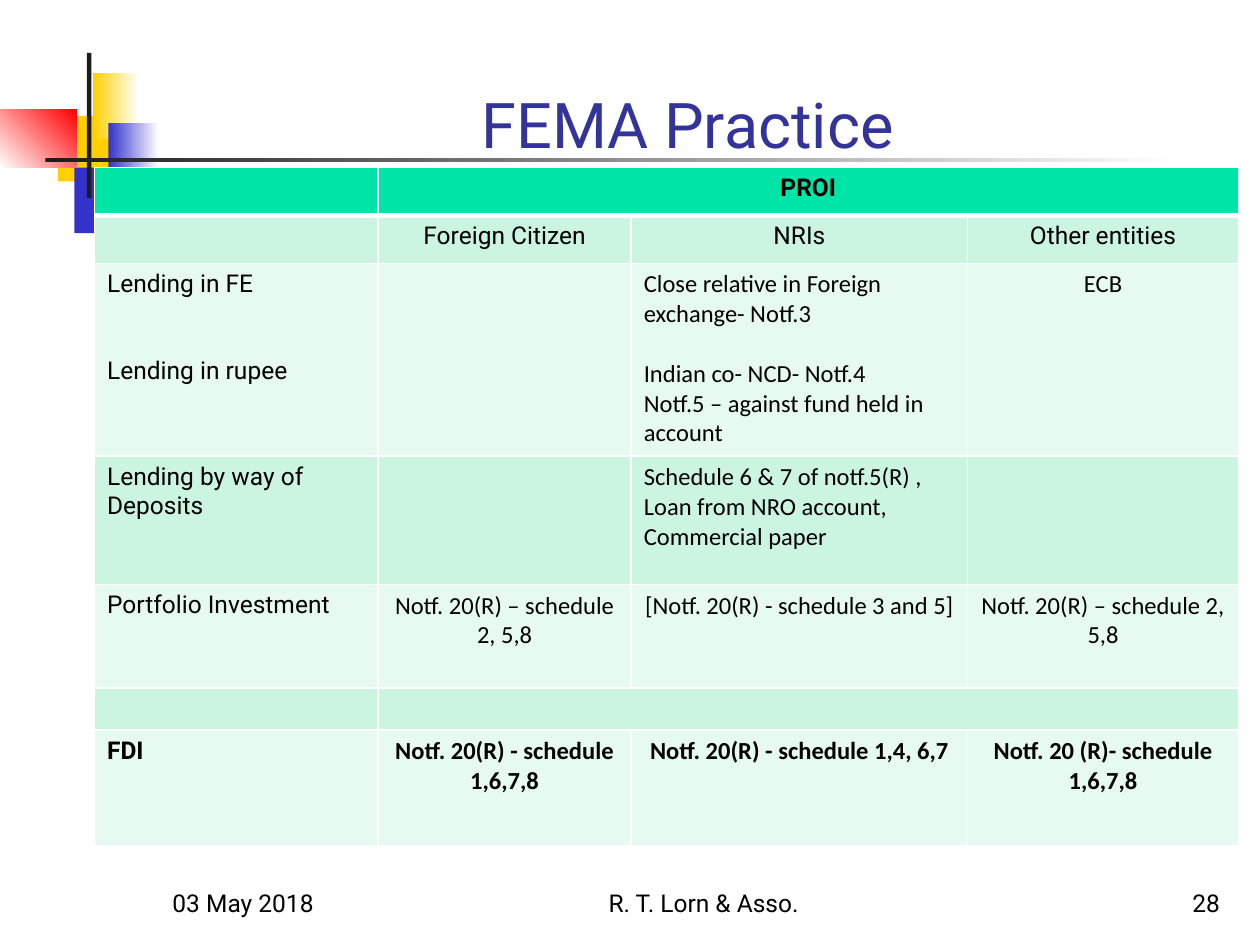
from dataclasses import dataclass

from lxml import etree
from pptx import Presentation
from pptx.dml.color import RGBColor
from pptx.enum.shapes import MSO_SHAPE
from pptx.enum.text import MSO_ANCHOR, PP_ALIGN
from pptx.oxml.ns import qn
from pptx.util import Inches, Pt

RECTANGLE = MSO_SHAPE.RECTANGLE
BOTTOM = MSO_ANCHOR.BOTTOM
LEFT, CENTER, RIGHT = PP_ALIGN.LEFT, PP_ALIGN.CENTER, PP_ALIGN.RIGHT

WHITE, BLACK, DARK = "FFFFFF", "000000", "1C1C1C"
YELLOW, BLUE, RED, TITLE_BLUE = "FFCF01", "3333CC", "FF0000", "333399"
HEADER, BAND, PALE = "00E4A8", "CCF5E1", "E7FAF1"

BLOCKS = [
    ((4.6, 9.2, 4.8, 5.2), (YELLOW,), 0),
    ((5.9, 13.3, 4.6, 5.2), (BLUE,), 0),
    ((7.4, 5.8, 3.6, 5.2), (YELLOW, WHITE), 0),
    ((8.6, 9.8, 4, 5.2), (BLUE, WHITE), 0),
    ((0, 8.7, 6.1, 4.6), (WHITE, RED), 45),
    ((6.9, 4.2, 0.35, 11.5), (DARK,), 0),
    ((3.6, 12.5, 90, 0.35), (DARK, WHITE), 0),
]
COLUMNS = [22.5, 20.1, 26.7, 21.5]
ROW_HEIGHTS = [3.8, 3.8, 15.3, 10.2, 8.2, 3.3, 9.2]
ROWS = [
    ["", "PROI", "", ""],
    ["", "Foreign Citizen", "NRIs", "Other entities"],
    ["Lending in FE\nLending in rupee", "",
     "Close relative in Foreign exchange- Notf.3\nIndian co- NCD- Notf.4\n"
     "Notf.5 – against fund held in account", "ECB"],
    ["Lending by way of Deposits", "",
     "Schedule 6 & 7 of notf.5(R) , Loan from NRO account, Commercial paper", ""],
    ["Portfolio Investment", "Notf. 20(R) – schedule 2, 5,8",
     "[Notf. 20(R) - schedule 3 and 5] ", "Notf. 20(R) – schedule 2, 5,8"],
    ["", "", "", ""],
    ["FDI", "Notf. 20(R) - schedule 1,6,7,8",
     "Notf. 20(R) - schedule 1,4, 6,7", "Notf. 20 (R)- schedule 1,6,7,8"],
]
MERGED_ROWS, BOLD_ROWS, LENDING_ROWS = (0, 5), (0, 6), (2, 3)
GAPS = {"Lending in rupee": 33, "Indian co- NCD- Notf.4": 17}


def color(code):
    """Turn a hex string into a colour."""
    return RGBColor.from_string(code)


@dataclass
class SlideBuilder:
    """Draw elements on a slide with a grid of 100 columns by 75 rows."""

    slide: object
    font: str = "Roboto"
    body_font: str = "Calibri"
    size: int = 14
    unit: int = Inches(0.1)

    def place(self, at):
        """Convert grid units to slide lengths."""
        return [round(value * self.unit) for value in at]

    def block(self, at, colors, angle):
        """Add a rectangle with a plain or gradient fill."""
        box = self.slide.shapes.add_shape(RECTANGLE, *self.place(at))
        box.shadow.inherit = False
        box.line.fill.background()
        if len(colors) == 1:
            box.fill.solid()
            box.fill.fore_color.rgb = color(colors[0])
            return
        box.fill.gradient()
        box.fill.gradient_angle = angle
        for stop, code in zip(box.fill.gradient_stops, colors):
            stop.color.rgb = color(code)

    def add_text(self, para, text, align, font=None, size=None, code=BLACK, bold=False):
        """Fill a paragraph with one styled run."""
        para.alignment = align
        span = para.add_run()
        span.text = text
        span.font.name = font or self.font
        span.font.size = Pt(size or self.size)
        span.font.bold = bold
        span.font.color.rgb = color(code)

    def label(self, at, text, align, **style):
        """Add a text box that sits on its bottom edge."""
        frame = self.slide.shapes.add_textbox(*self.place(at)).text_frame
        frame.word_wrap = True
        frame.vertical_anchor = BOTTOM
        self.add_text(frame.paragraphs[0], text, align, **style)

    def border(self, cell, widths):
        """Draw white borders around a cell."""
        properties = cell._tc.get_or_add_tcPr()
        for index, (side, width) in enumerate(widths.items()):
            line = etree.Element(qn(f"a:ln{side}"), w=str(Pt(width)))
            fill = etree.SubElement(line, qn("a:solidFill"))
            etree.SubElement(fill, qn("a:srgbClr"), val=WHITE)
            properties.insert(index, line)

    def cell(self, cell, row, column, text):
        """Fill, border and letter one table cell."""
        cell.fill.solid()
        cell.fill.fore_color.rgb = color(HEADER if row == 0 else BAND if row % 2 else PALE)
        self.border(cell, {"L": 1, "R": 1, "T": 3 if row == 1 else 1, "B": 3 if row == 0 else 1})
        frame = cell.text_frame
        if not text:
            etree.SubElement(frame.paragraphs[0]._p, qn("a:endParaRPr"), sz=str(self.size * 100))
            return
        left = column == 0 or (column == 2 and row in LENDING_ROWS)
        font = self.font if column == 0 or row < 2 else self.body_font
        for index, line in enumerate(text.split("\n")):
            para = frame.add_paragraph() if index else frame.paragraphs[0]
            para.space_before = Pt(GAPS.get(line, 0))
            self.add_text(para, line, LEFT if left else CENTER, font, bold=row in BOLD_ROWS)

    def table(self, left, top):
        """Add the table of permitted routes."""
        at = self.place((left, top, sum(COLUMNS), sum(ROW_HEIGHTS)))
        grid = self.slide.shapes.add_table(len(ROWS), len(COLUMNS), *at).table
        grid.first_row = grid.horz_banding = False
        for column, width in zip(grid.columns, self.place(COLUMNS)):
            column.width = width
        for row, height in zip(grid.rows, self.place(ROW_HEIGHTS)):
            row.height = height
        for row in MERGED_ROWS:
            grid.cell(row, 1).merge(grid.cell(row, 3))
        for row, texts in enumerate(ROWS):
            for column, text in enumerate(texts):
                self.cell(grid.cell(row, column), row, column, text)


def main():
    """Build and save the deck."""
    deck = Presentation()
    deck.slide_width, deck.slide_height = Inches(10), Inches(7.5)
    page = SlideBuilder(deck.slides.add_slide(deck.slide_layouts[6]))
    for at, colors, angle in BLOCKS:
        page.block(at, colors, angle)
    page.label((12.7, 68.3, 20.8, 5), "03 May 2018", LEFT)
    page.label((40, 68.3, 31.7, 5), "R. T. Lorn & Asso.", CENTER)
    page.label((77, 68.3, 20.8, 5), "28", RIGHT)
    page.label((12.6, 2.3, 85.2, 11), "FEMA Practice ", CENTER, size=36, code=TITLE_BLUE)
    page.table(7.5, 13.3)
    deck.save("out.pptx")


if __name__ == "__main__":
    main()
